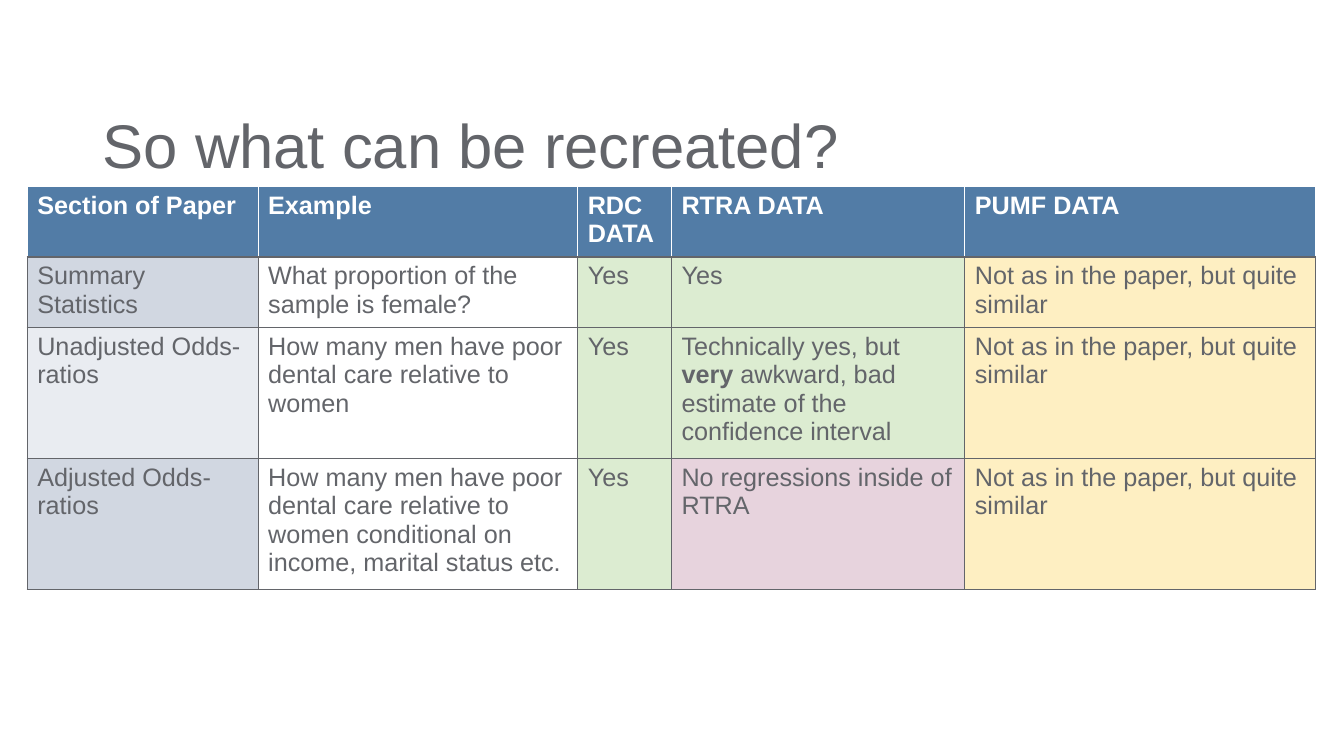
"""Build a slide that compares which results each data source can recreate."""
from dataclasses import dataclass

from lxml.etree import SubElement
from pptx import Presentation
from pptx.dml.color import RGBColor
from pptx.enum.text import MSO_ANCHOR
from pptx.oxml.ns import qn
from pptx.util import Inches, Pt

TITLE = "So what can be recreated?"
HEADERS = ["Section of Paper", "Example", "RDC DATA", "RTRA DATA", "PUMF DATA"]
SIMILAR = ("Not as in the paper, but quite similar", "partly")
ROWS = [
    [("Summary Statistics", "dark_band"),
     ("What proportion of the sample is female?", "plain"),
     ("Yes", "possible"), ("Yes", "possible"), SIMILAR],
    [("Unadjusted Odds-ratios", "light_band"),
     ("How many men have poor dental care relative to women", "plain"),
     ("Yes", "possible"),
     (["Technically yes, but ", ("very", True),
       " awkward, bad estimate of the confidence interval"], "possible"),
     SIMILAR],
    [("Adjusted Odds-ratios", "dark_band"),
     ("How many men have poor dental care relative to women conditional on "
      "income, marital status etc.", "plain"),
     ("Yes", "possible"), ("No regressions inside of RTRA", "impossible"), SIMILAR],
]
COLUMN_WIDTHS = [2.29, 3.17, 0.93, 2.91, 3.48]
ROW_HEIGHTS = [0.66, 0.66, 1.22, 1.27]
TABLE_LEFT, TABLE_TOP = 0.27, 1.85


@dataclass(frozen=True)
class Theme:
    """Font, type sizes and colours."""
    font: str = "Arial"
    title_size: int = 44
    table_size: int = 18
    text: str = "63656A"
    header_text: str = "FFFFFF"
    header: str = "527CA6"
    dark_band: str = "D1D7E1"
    light_band: str = "E9ECF1"
    plain: str = "FFFFFF"
    possible: str = "DCECD1"
    partly: str = "FEEFC2"
    impossible: str = "E7D3DD"


THEME = Theme()


def add_run(paragraph, text, size, color, bold=False):
    run = paragraph.add_run()
    run.text = text
    run.font.name = THEME.font
    run.font.size = Pt(size)
    run.font.bold = bold
    run.font.color.rgb = RGBColor.from_string(color)


def set_borders(cell, side_color, bottom_color):
    properties = cell._tc.get_or_add_tcPr()
    for side in "LRTB":
        line = SubElement(properties, qn(f"a:ln{side}"), w=str(Pt(1)))
        fill = SubElement(line, qn("a:solidFill"))
        color = bottom_color if side == "B" else side_color
        SubElement(fill, qn("a:srgbClr"), val=color)


def fill_cell(cell, content, fill, is_header):
    color = THEME.header_text if is_header else THEME.text
    set_borders(cell, color, THEME.text)
    cell.fill.solid()
    cell.fill.fore_color.rgb = RGBColor.from_string(getattr(THEME, fill))
    paragraph = cell.text_frame.paragraphs[0]
    for part in [content] if isinstance(content, str) else content:
        text, bold = (part, is_header) if isinstance(part, str) else part
        add_run(paragraph, text, THEME.table_size, color, bold)


def add_title(slide):
    box = slide.shapes.add_textbox(Inches(0.92), Inches(1.09), Inches(11.5), Inches(0.76))
    frame = box.text_frame
    frame.word_wrap = True
    frame.vertical_anchor = MSO_ANCHOR.MIDDLE
    paragraph = frame.paragraphs[0]
    paragraph.line_spacing = 0.9
    add_run(paragraph, TITLE, THEME.title_size, THEME.text)


def add_comparison(slide):
    rows = [[(header, "header") for header in HEADERS]] + ROWS
    table = slide.shapes.add_table(
        len(rows), len(HEADERS), Inches(TABLE_LEFT), Inches(TABLE_TOP),
        Inches(sum(COLUMN_WIDTHS)), Inches(sum(ROW_HEIGHTS))).table
    table.horz_banding = False
    for column, width in zip(table.columns, COLUMN_WIDTHS):
        column.width = Inches(width)
    for row, height in zip(table.rows, ROW_HEIGHTS):
        row.height = Inches(height)
    for row_index, row in enumerate(rows):
        for column_index, (content, fill) in enumerate(row):
            fill_cell(table.cell(row_index, column_index), content, fill, row_index == 0)


def main():
    presentation = Presentation()
    presentation.slide_width = Inches(13.33)
    presentation.slide_height = Inches(7.5)
    slide = presentation.slides.add_slide(presentation.slide_layouts[6])
    add_title(slide)
    add_comparison(slide)
    presentation.save("out.pptx")


if __name__ == "__main__":
    main()
